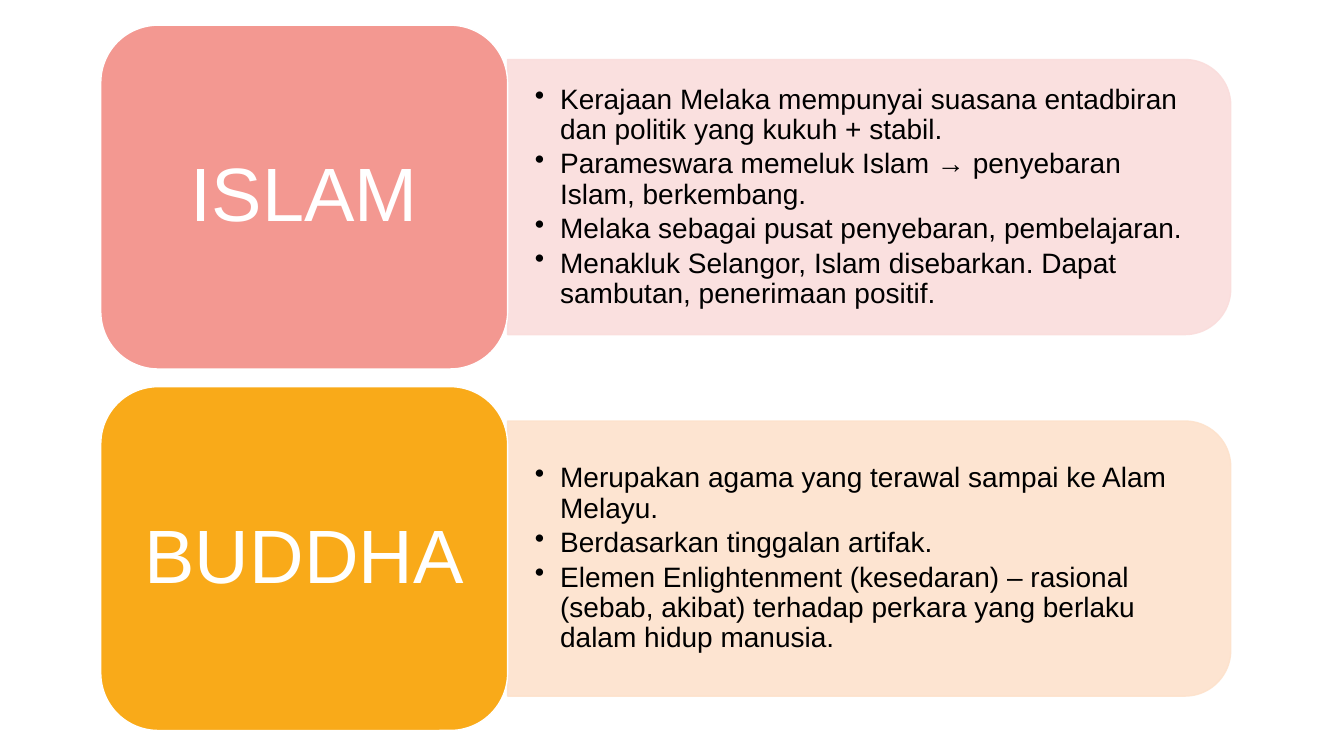
import pptx
import pptx.util
import pptx.dml.color
import pptx.enum.shapes
import pptx.enum.text
import pptx.oxml
import pptx.oxml.ns

Pt = pptx.util.Pt
RGBColor = pptx.dml.color.RGBColor
Shape = pptx.enum.shapes.MSO_SHAPE
Align = pptx.enum.text.PP_ALIGN
Anchor = pptx.enum.text.MSO_ANCHOR

WHITE = RGBColor(0xFF, 0xFF, 0xFF)
BLACK = RGBColor(0x00, 0x00, 0x00)
CORAL = RGBColor(0xF3, 0x98, 0x91)
PALE_CORAL = RGBColor(0xFA, 0xDD, 0xDC)
AMBER = RGBColor(0xF9, 0xAA, 0x19)
PALE_AMBER = RGBColor(0xFD, 0xE2, 0xCC)

TOP, PITCH = 18, 258.2
LEFT, NAME_WIDTH, NAME_HEIGHT = 72, 290.6, 245.6
PANEL_WIDTH, PANEL_HEIGHT = 516.5, 196.5
POINTS_WIDTH, POINTS_HEIGHT = 507, 177.2

RELIGIONS = [
    ("ISLAM", CORAL, PALE_CORAL, [
        "Kerajaan Melaka mempunyai suasana entadbiran dan politik yang kukuh + stabil.",
        "Parameswara memeluk Islam → penyebaran Islam, berkembang.",
        "Melaka sebagai pusat penyebaran, pembelajaran.",
        "Menakluk Selangor, Islam disebarkan. Dapat sambutan, penerimaan positif.",
    ]),
    ("BUDDHA", AMBER, PALE_AMBER, [
        "Merupakan agama yang terawal sampai ke Alam Melayu.",
        "Berdasarkan tinggalan artifak.",
        "Elemen Enlightenment (kesedaran) – rasional (sebab, akibat) "
        "terhadap perkara yang berlaku dalam hidup manusia.",
    ]),
]


class ReligionSlide:
    font = "Arial"

    def __init__(self, slide):
        self.slide = slide

    def block(self, preset, left, top, width, height, fill, line):
        block = self.slide.shapes.add_shape(preset, Pt(left), Pt(top), Pt(width), Pt(height))
        block.shadow.inherit = False
        block.fill.solid()
        block.fill.fore_color.rgb = fill
        block.line.color.rgb = line
        block.line.width = Pt(1)
        return block

    def frame(self, shape, text, side, edge):
        """Fill a shape with wrapped text centred vertically inside its margins."""
        frame = shape.text_frame
        frame.text = text
        frame.word_wrap = True
        frame.vertical_anchor = Anchor.MIDDLE
        frame.margin_left = frame.margin_right = Pt(side)
        frame.margin_top = frame.margin_bottom = Pt(edge)
        return frame.paragraphs

    def style(self, paragraph, size, color):
        paragraph.line_spacing = 0.9
        for run in paragraph.runs:
            run.font.name = self.font
            run.font.size = Pt(size)
            run.font.color.rgb = color

    def panel(self, left, middle, color):
        """Draw a translucent panel, turned so its rounded end faces right."""
        panel = self.block(Shape.ROUND_2_SAME_RECTANGLE,
                           left + (PANEL_WIDTH - PANEL_HEIGHT) / 2, middle - PANEL_WIDTH / 2,
                           PANEL_HEIGHT, PANEL_WIDTH, color, color)
        panel.rotation = 90
        for tint in panel._element.spPr.iter(pptx.oxml.ns.qn("a:srgbClr")):
            tint.append(pptx.oxml.parse_xml(
                f'<a:alpha {pptx.oxml.ns.nsdecls("a")} val="90000"/>'))

    def points(self, left, middle, points):
        box = self.slide.shapes.add_textbox(Pt(left), Pt(middle - POINTS_HEIGHT / 2),
                                            Pt(POINTS_WIDTH), Pt(POINTS_HEIGHT))
        for paragraph in self.frame(box, "\n".join(points), 19.5, 9.75):
            self.style(paragraph, 20, BLACK)
            paragraph.level = 1
            paragraph.space_after = Pt(3)
            properties = paragraph._p.get_or_add_pPr()
            properties.set("marL", str(Pt(18)))
            properties.set("indent", str(Pt(-18)))
            properties.append(pptx.oxml.parse_xml(
                f'<a:buChar {pptx.oxml.ns.nsdecls("a")} char="•"/>'))

    def name(self, left, top, name, color):
        tile = self.block(Shape.ROUNDED_RECTANGLE, left, top, NAME_WIDTH, NAME_HEIGHT,
                          color, WHITE)
        for paragraph in self.frame(tile, name, 16.2, 8.1):
            paragraph.alignment = Align.CENTER
            self.style(paragraph, 54, WHITE)


def main():
    deck = pptx.Presentation()
    deck.slide_width, deck.slide_height = Pt(960), Pt(540)
    page = ReligionSlide(deck.slides.add_slide(deck.slide_layouts[6]))
    for row, (name, color, pale, points) in enumerate(RELIGIONS):
        top = TOP + row * PITCH
        middle = top + NAME_HEIGHT / 2
        panel_left = LEFT + NAME_WIDTH
        page.panel(panel_left, middle, pale)
        page.points(panel_left, middle, points)
        page.name(LEFT, top, name, color)
    deck.save("out.pptx")


if __name__ == "__main__":
    main()
